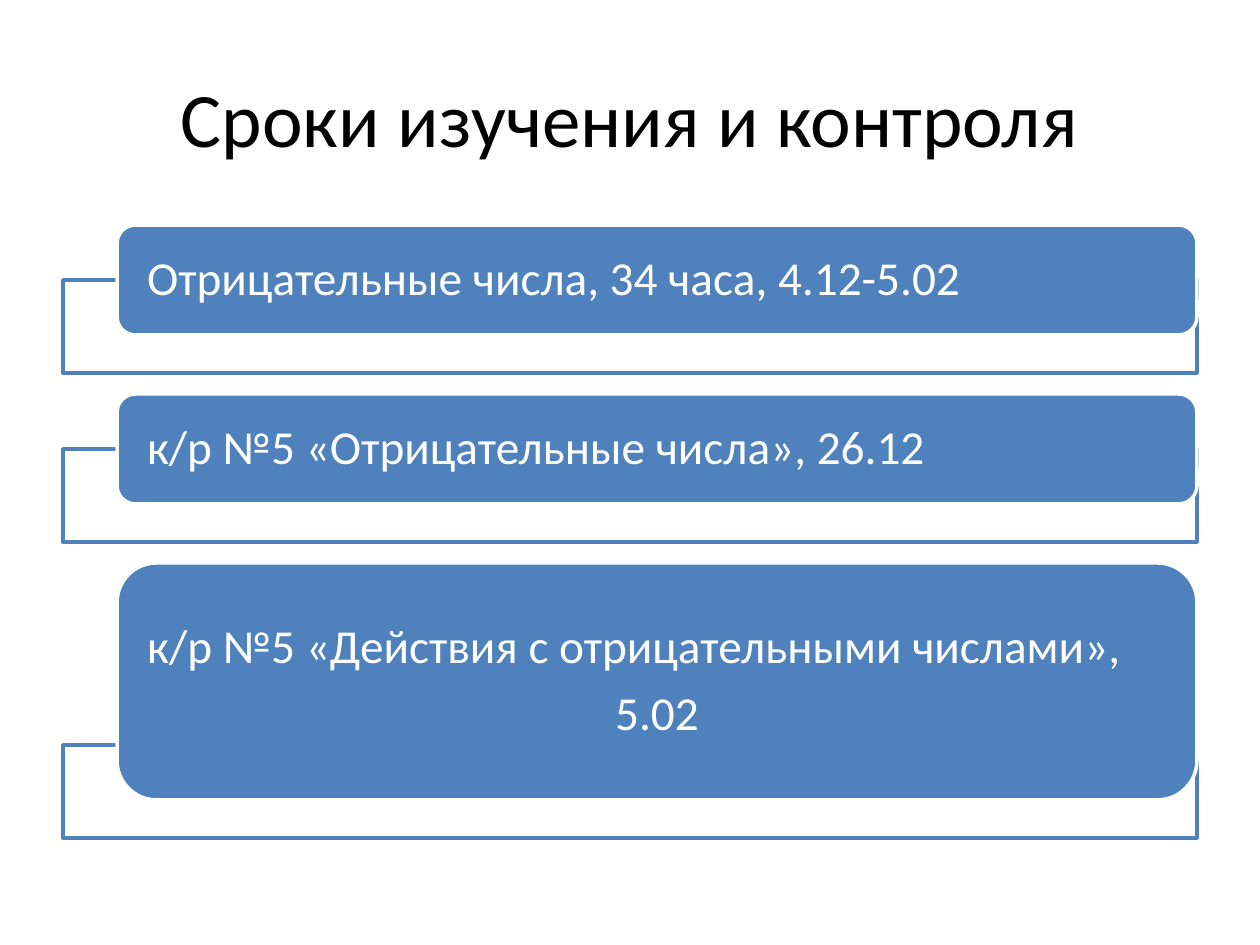
from dataclasses import dataclass

from lxml.etree import SubElement
from pptx import Presentation
from pptx.dml.color import RGBColor as Rgb
from pptx.enum.shapes import MSO_SHAPE as Shape
from pptx.enum.text import MSO_ANCHOR as Anchor, PP_ALIGN as Align
from pptx.oxml.ns import qn
from pptx.util import Pt

PX = 914400 // 126


@dataclass(frozen=True)
class Theme:
    font: str = "Calibri"
    ink: Rgb = Rgb(0, 0, 0)
    paper: Rgb = Rgb(255, 255, 255)
    accent: Rgb = Rgb(0x4F, 0x81, 0xBD)
    title_size: int = 44
    stage_size: int = 27
    stroke: int = 2


THEME = Theme()
CORNER = 1 / 6
ARC_INSET = 0.29

STAGES = [
    (110, [("Отрицательные числа, 34 часа, 4.12-5.02", Align.LEFT)]),
    (110, [("к/р №5 «Отрицательные числа», 26.12", Align.LEFT)]),
    (237, [("к/р №5 «Действия с отрицательными числами»,", Align.LEFT),
           ("5.02", Align.CENTER)]),
]


def emu(*lengths):
    return [round(length * PX) for length in lengths]


def add_run(paragraph, words, size, color):
    run = paragraph.add_run()
    run.text = words
    run.font.name = THEME.font
    run.font.size = Pt(size)
    run.font.color.rgb = color


def add_panel(slide, kind, box, fill, line):
    panel = slide.shapes.add_shape(kind, *emu(*box))
    panel.shadow.inherit = False
    panel.fill.solid()
    panel.fill.fore_color.rgb = fill
    panel.line.color.rgb = line
    panel.line.width = Pt(THEME.stroke)
    return panel


def add_title(slide, box):
    frame = slide.shapes.add_textbox(*emu(*box)).text_frame
    frame.word_wrap = True
    frame.vertical_anchor = Anchor.MIDDLE
    heading = frame.paragraphs[0]
    heading.alignment = Align.CENTER
    add_run(heading, "Сроки изучения и контроля", THEME.title_size, THEME.ink)


def add_stage(slide, box, lines):
    left, top, width, height = box
    indent, overlap, tray_height, padding = 54, 55, 93, 30

    tray = add_panel(slide, Shape.RECTANGLE,
                     (left, top + height - overlap, width, tray_height),
                     THEME.paper, THEME.accent)
    tray_color = tray.fill._xPr.find(qn("a:solidFill"))[0]
    SubElement(tray_color, qn("a:alpha"), val="90000")

    label = add_panel(slide, Shape.ROUNDED_RECTANGLE,
                      (left + indent, top, width - indent, height),
                      THEME.accent, THEME.paper)
    label.adjustments[0] = CORNER
    frame = label.text_frame
    frame.word_wrap = True
    frame.vertical_anchor = Anchor.MIDDLE
    side = padding - height * CORNER * ARC_INSET
    frame.margin_left, frame.margin_right = emu(side, side)
    frame.margin_top = frame.margin_bottom = 0
    for number, (words, alignment) in enumerate(lines):
        paragraph = frame.add_paragraph() if number else frame.paragraphs[0]
        paragraph.alignment = alignment
        paragraph.line_spacing = 0.9
        paragraph.space_after = Pt(9)
        add_run(paragraph, words, THEME.stage_size, THEME.paper)


def add_schedule(slide, left, top, width):
    gap = 59
    for height, lines in STAGES:
        add_stage(slide, (left, top, width, height), lines)
        top += height + gap


def main():
    deck = Presentation()
    deck.slide_width, deck.slide_height = emu(1260, 945)
    slide = deck.slides.add_slide(deck.slide_layouts[6])
    add_title(slide, (63, 38, 1134, 157))
    add_schedule(slide, 63, 225, 1134)
    deck.save("out.pptx")


if __name__ == "__main__":
    main()
